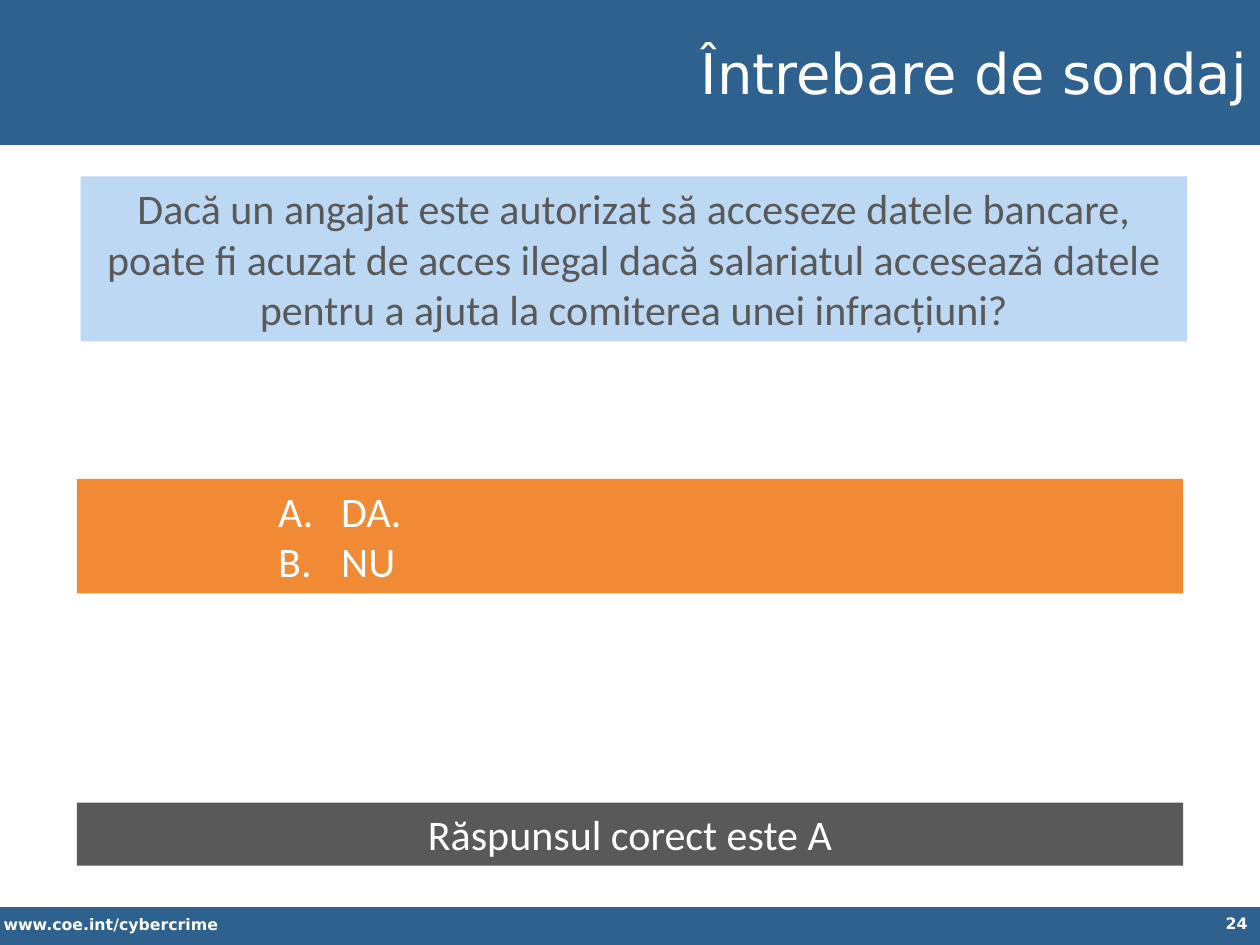
import lxml.etree
import pptx
import pptx.dml.color
import pptx.enum.shapes
import pptx.enum.text
import pptx.oxml.ns
import pptx.util

Inches = pptx.util.Inches
RGBColor = pptx.dml.color.RGBColor
ALIGN = pptx.enum.text.PP_ALIGN
ANCHOR = pptx.enum.text.MSO_ANCHOR

BLUE = RGBColor(0x2F, 0x61, 0x8F)
PALE_BLUE = RGBColor(0xBD, 0xD8, 0xF3)
ORANGE = RGBColor(0xF0, 0x8A, 0x34)
GRAY = RGBColor(0x59, 0x59, 0x59)
WHITE = RGBColor(0xFF, 0xFF, 0xFF)

presentation = pptx.Presentation()
presentation.slide_width = Inches(10)
presentation.slide_height = Inches(7.5)
slide = presentation.slides.add_slide(presentation.slide_layouts[6])


def add_band(left, top, width, height, color):
    band = slide.shapes.add_shape(
        pptx.enum.shapes.MSO_SHAPE.RECTANGLE,
        Inches(left), Inches(top), Inches(width), Inches(height))
    band.shadow.inherit = False
    band.fill.solid()
    band.fill.fore_color.rgb = color
    band.line.fill.background()
    return band


def write(shape, *lines, size=24, font="Calibri", color=WHITE, bold=False,
          align=ALIGN.CENTER, anchor=ANCHOR.TOP, lettered=False):
    """Fill a shape with one paragraph per line, lettered A., B. on request."""
    frame = shape.text_frame
    frame.word_wrap = True
    frame.vertical_anchor = anchor
    for index, line in enumerate(lines):
        paragraph = frame.add_paragraph() if index else frame.paragraphs[0]
        paragraph.text = line
        paragraph.alignment = align
        if lettered:
            paragraph.level = 3
            properties = paragraph._p.get_or_add_pPr()
            properties.set("marL", str(Inches(2)))
            properties.set("indent", str(Inches(-0.5)))
            lxml.etree.SubElement(properties, pptx.oxml.ns.qn("a:buAutoNum"),
                                  type="alphaUcPeriod")
        for run in paragraph.runs:
            run.font.size = pptx.util.Pt(size)
            run.font.name = font
            run.font.bold = bold
            run.font.color.rgb = color


# Header and footer
add_band(0, -0.03, 10, 1.18, BLUE)
add_band(0, 7.2, 10, 0.32, BLUE)

website = slide.shapes.add_textbox(Inches(-0.07), Inches(7.21), Inches(3.52), Inches(0.25))
write(website, "www.coe.int/cybercrime", size=9, font="DejaVu Sans", bold=True,
      align=ALIGN.LEFT)

page_number = slide.shapes.add_textbox(Inches(7.75), Inches(7.2), Inches(2.25), Inches(0.31))
write(page_number, "24", size=9, font="DejaVu Sans", bold=True, align=ALIGN.RIGHT)

# Poll question, answer and options
question = add_band(0.64, 1.4, 8.78, 1.31, PALE_BLUE)
write(question,
      "Dacă un angajat este autorizat să acceseze datele bancare, poate fi acuzat "
      "de acces ilegal dacă salariatul accesează datele pentru a ajuta la comiterea "
      "unei infracțiuni?", color=GRAY)

answer = add_band(0.61, 6.37, 8.78, 0.5, GRAY)
write(answer, "Răspunsul corect este A")

options = add_band(0.61, 3.8, 8.78, 0.91, ORANGE)
write(options, "DA.", "NU", align=ALIGN.LEFT, lettered=True)

title = add_band(2.2, 0.07, 7.8, 1.01, BLUE)
write(title, "Întrebare de sondaj", size=32, font="DejaVu Sans",
      align=ALIGN.RIGHT, anchor=ANCHOR.MIDDLE)

presentation.save("out.pptx")
